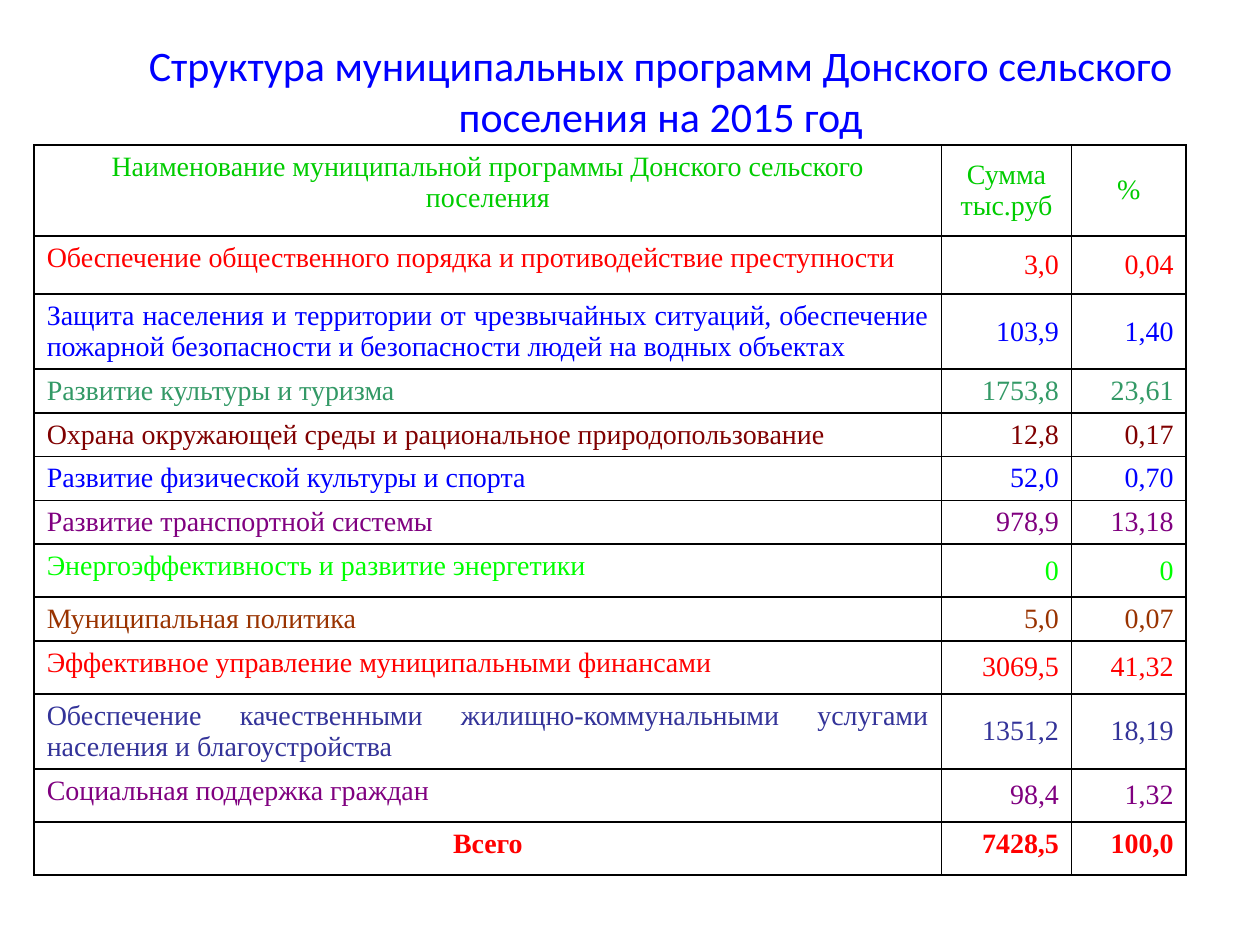
import pptx
import pptx.util
import pptx.dml.color
import pptx.enum.text
import lxml.etree
from pptx.util import Cm

Align = pptx.enum.text.PP_ALIGN
Anchor = pptx.enum.text.MSO_ANCHOR
HUES = {
    "blue": "0000FF", "leaf": "00CC00", "red": "FF0000", "sea": "339966",
    "maroon": "800000", "purple": "800080", "lime": "00FF00",
    "brown": "993300", "indigo": "333399", "black": "000000", "white": "FFFFFF",
}
NS = "http://schemas.openxmlformats.org/drawingml/2006/main"

# Row height in cm, colour, then the three cells
ROWS = [
    (1.84, "leaf", "Наименование муниципальной программы Донского сельского поселения", "Сумма тыс.руб", "%"),
    (1.17, "red", "Обеспечение общественного порядка и противодействие преступности", "3,0", "0,04"),
    (1.51, "blue", "Защита населения и территории от чрезвычайных ситуаций, обеспечение "
     "пожарной безопасности и безопасности людей на водных объектах", "103,9", "1,40"),
    (0.88, "sea", "Развитие культуры и туризма", "1753,8", "23,61"),
    (0.88, "maroon", "Охрана окружающей среды и рациональное природопользование", "12,8", "0,17"),
    (0.88, "blue", "Развитие физической культуры и спорта", "52,0", "0,70"),
    (0.88, "purple", "Развитие транспортной системы", "978,9", "13,18"),
    (1.07, "lime", "Энергоэффективность и развитие энергетики", "0", "0"),
    (0.88, "brown", "Муниципальная политика", "5,0", "0,07"),
    (1.07, "red", "Эффективное управление муниципальными финансами", "3069,5", "41,32"),
    (1.51, "indigo", "Обеспечение качественными жилищно-коммунальными услугами "
     "населения и благоустройства", "1351,2", "18,19"),
    (1.07, "purple", "Социальная поддержка граждан", "98,4", "1,32"),
    (1.07, "red", "Всего", "7428,5", "100,0"),
]
WIDTHS = [18.29, 2.62, 2.31]


def style(para, face, size, hue, align):
    para.alignment = align
    para.font.name = face
    para.font.size = pptx.util.Pt(size)
    para.font.color.rgb = pptx.dml.color.RGBColor.from_string(HUES[hue])


def frame(cell):
    props = cell._tc.get_or_add_tcPr()
    for side in "LRTB":
        line = lxml.etree.SubElement(props, f"{{{NS}}}ln{side}", w="12700")
        fill = lxml.etree.SubElement(line, f"{{{NS}}}solidFill")
        lxml.etree.SubElement(fill, f"{{{NS}}}srgbClr", val=HUES["black"])


deck = pptx.Presentation()
deck.slide_width, deck.slide_height = Cm(25.4), Cm(19.05)
slide = deck.slides.add_slide(deck.slide_layouts[5])

# Title
title = slide.shapes.title
title.left, title.top, title.width, title.height = Cm(2.54), Cm(0.71), Cm(21.56), Cm(2.21)
title.text_frame.text = "Структура муниципальных программ Донского сельского поселения на 2015 год"
title.text_frame.auto_size = pptx.enum.text.MSO_AUTO_SIZE.NONE
title.text_frame.vertical_anchor = Anchor.MIDDLE
style(title.text_frame.paragraphs[0], "Calibri", 24, "blue", Align.CENTER)

# Table of programmes
high = sum(row[0] for row in ROWS)
table = slide.shapes.add_table(len(ROWS), len(WIDTHS), Cm(0.69), Cm(2.92),
                               Cm(sum(WIDTHS)), Cm(high)).table
table.first_row = table.horz_banding = False
for col, width in zip(table.columns, WIDTHS):
    col.width = Cm(width)

last = len(ROWS) - 1
for r, (tall, hue, *texts) in enumerate(ROWS):
    table.rows[r].height = Cm(tall)
    for c, text in enumerate(texts):
        cell = table.cell(r, c)
        cell.text = text
        frame(cell)
        cell.fill.solid()
        cell.fill.fore_color.rgb = pptx.dml.color.RGBColor.from_string(HUES["white"])
        cell.vertical_anchor = Anchor.TOP if c == 0 or r == last else Anchor.MIDDLE
        if r == 0 or (r == last and c == 0):
            align = Align.CENTER
        else:
            align = Align.RIGHT if c else Align.JUSTIFY
        para = cell.text_frame.paragraphs[0]
        style(para, "Times New Roman", 16, hue, align)
        para.font.bold = r == last

deck.save("out.pptx")
